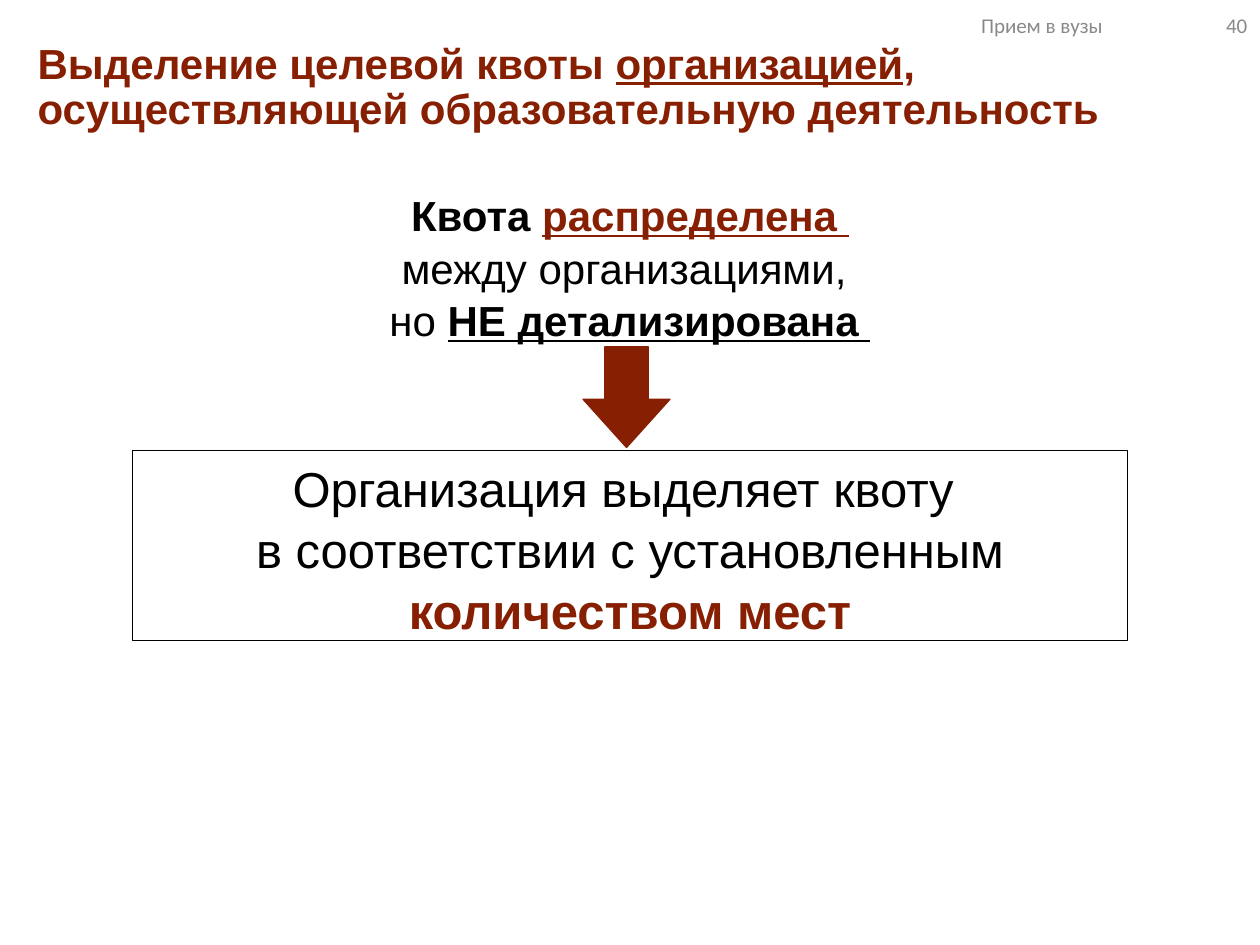
from lxml.etree import SubElement
from pptx import Presentation
from pptx.dml.color import RGBColor
from pptx.enum.shapes import MSO_SHAPE as Shape
from pptx.enum.text import MSO_ANCHOR as Anchor, PP_ALIGN as Align
from pptx.oxml.ns import qn
from pptx.util import Pt

RED, BLACK, WHITE, GRAY = "871F03", "000000", "FFFFFF", "898989"


def color(hex_code):
    return RGBColor.from_string(hex_code)


def write_text(shape, paragraphs, font="Arial", size=24, fill=BLACK,
               align=Align.LEFT, spacing=1.0, anchor=Anchor.TOP):
    """Write paragraphs, each a list of (text, run format) pairs."""
    frame = shape.text_frame
    frame.word_wrap = True
    frame.vertical_anchor = anchor
    for index, runs in enumerate(paragraphs):
        paragraph = frame.add_paragraph() if index else frame.paragraphs[0]
        paragraph.alignment = align
        paragraph.line_spacing = spacing
        for text, style in runs:
            run = paragraph.add_run()
            run.text = text
            run.font.name = font
            run.font.size = Pt(size)
            run.font.bold = style.get("bold", False)
            run.font.underline = style.get("underline", False)
            run.font.color.rgb = color(style.get("fill", fill))


def add_text(slide, box, paragraphs, **text_format):
    shape = slide.shapes.add_textbox(*map(Pt, box))
    write_text(shape, paragraphs, **text_format)
    return shape


def add_shape(slide, kind, box, fill, line=None, line_width=0.75):
    shape = slide.shapes.add_shape(kind, *map(Pt, box))
    shape.shadow.inherit = False
    shape.fill.solid()
    shape.fill.fore_color.rgb = color(fill)
    if line:
        shape.line.color.rgb = color(line)
        shape.line.width = Pt(line_width)
    else:
        shape.line.fill.background()
    return shape


def add_down_arrow(slide, box):
    arrow = add_shape(slide, Shape.RIGHT_ARROW, box, RED, RED)
    arrow.rotation = 90
    arrow.adjustments[0] = 0.5
    arrow.adjustments[1] = 0.555


def add_page_header(slide, label, number):
    """Put the label and the page number on one line, parted by a tab stop."""
    header = add_text(slide, (507.6, 0, 212.4, 28.8), [[(f"{label}\t{number}", {})]],
                      font="Calibri", size=12, fill=GRAY, anchor=Anchor.MIDDLE)
    header.text_frame.margin_left = Pt(53)
    header.text_frame.margin_right = 0
    properties = header.text_frame.paragraphs[0]._p.get_or_add_pPr()
    tabs = SubElement(properties, qn("a:tabLst"))
    SubElement(tabs, qn("a:tab"), pos=str(Pt(140)), algn="l")


def main():
    presentation = Presentation()
    presentation.slide_width, presentation.slide_height = Pt(720), Pt(540)
    slide = presentation.slides.add_slide(presentation.slide_layouts[6])
    bold = {"bold": True}
    underlined = {"bold": True, "underline": True}

    add_text(slide, (14.4, 20.9, 705.6, 33.8), [[
        ("Выделение целевой квоты ", bold),
        ("организацией", underlined),
        (", осуществляющей образовательную деятельность", bold),
    ]], fill=RED, spacing=0.9)

    quota = add_shape(slide, Shape.RECTANGLE, (172, 103.7, 376, 123.8), WHITE)
    write_text(quota, [
        [("Квота ", bold), ("распределена ", {**underlined, "fill": RED})],
        [("между организациями, ", {})],
        [("но ", {}), ("НЕ детализирована ", underlined)],
    ], align=Align.CENTER, spacing=1.04)

    decision = add_shape(slide, Shape.RECTANGLE, (75.6, 257, 568.8, 108.7),
                         WHITE, BLACK, 0.25)
    write_text(decision, [
        [("Организация выделяет квоту ", {})],
        [("в соответствии с установленным", {})],
        [("количеством мест", {"bold": True, "fill": RED})],
    ], size=28, align=Align.CENTER, spacing=1.04)

    add_down_arrow(slide, (329.2, 202.1, 57.6, 49.7))
    add_page_header(slide, "Прием в вузы", 40)
    presentation.save("out.pptx")


if __name__ == "__main__":
    main()
